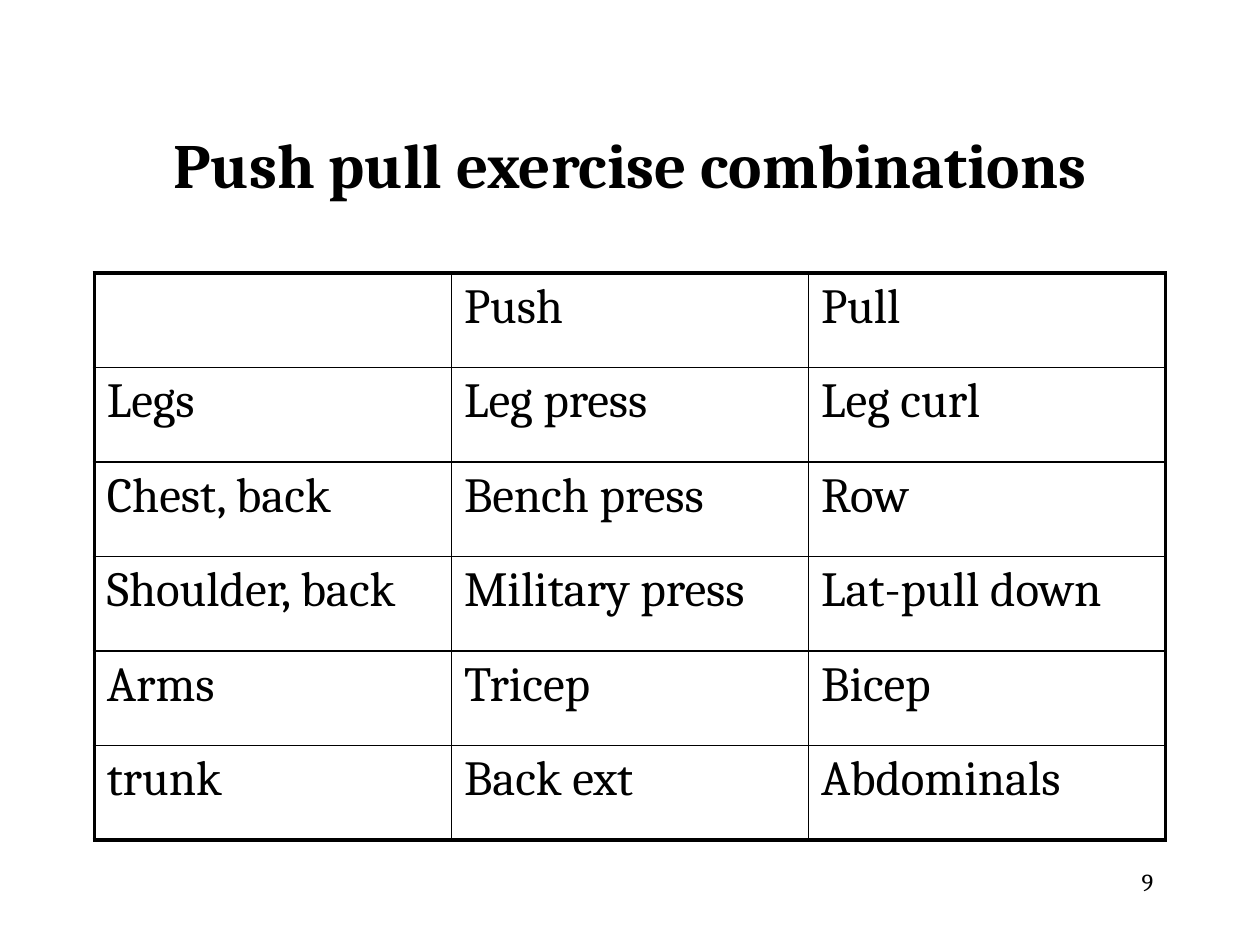
"""Build a slide with a table of push and pull exercises."""
from lxml.etree import SubElement
from pptx import Presentation
from pptx.dml.color import RGBColor
from pptx.enum.text import MSO_ANCHOR, PP_ALIGN
from pptx.oxml.ns import qn
from pptx.util import Cm, Pt

BLACK = RGBColor(0, 0, 0)
FACE = "Cambria"
ROWS = [
    ("", "Push", "Pull"),
    ("Legs", "Leg press", "Leg curl"),
    ("Chest, back", "Bench press", "Row"),
    ("Shoulder, back", "Military press", "Lat-pull down"),
    ("Arms", "Tricep", "Bicep"),
    ("trunk", "Back ext", "Abdominals"),
]


def write(frame, text, size, align=PP_ALIGN.LEFT, bold=False):
    line = frame.paragraphs[0]
    line.text = text
    line.alignment = align
    line.font.name = FACE
    line.font.size = Pt(size)
    line.font.bold = bold
    line.font.color.rgb = BLACK


def edge(cell, side, width):
    props = cell._tc.get_or_add_tcPr()
    line = SubElement(props, qn(f"a:ln{side}"), w=str(Pt(width)))
    fill = SubElement(line, qn("a:solidFill"))
    SubElement(fill, qn("a:srgbClr"), val=str(BLACK))


deck = Presentation()
deck.slide_width, deck.slide_height = Cm(25.4), Cm(19.05)
slide = deck.slides.add_slide(deck.slide_layouts[6])

number = slide.shapes.add_textbox(Cm(18.2), Cm(17.36), Cm(5.3), Cm(1.27)).text_frame
number.word_wrap = True
write(number, "9", 14, PP_ALIGN.RIGHT)

title = slide.shapes.add_textbox(Cm(1.9), Cm(1.7), Cm(21.6), Cm(3.18)).text_frame
title.word_wrap = True
title.vertical_anchor = MSO_ANCHOR.MIDDLE
write(title, "Push pull exercise combinations", 36, PP_ALIGN.CENTER, True)

high, wide = len(ROWS), len(ROWS[0])
table = slide.shapes.add_table(high, wide, Cm(1.9), Cm(5.5), Cm(21.6), Cm(11.43)).table
table.first_row = table.horz_banding = False
for r, row in enumerate(ROWS):
    for c, text in enumerate(row):
        cell = table.cell(r, c)
        outer = {"L": c == 0, "R": c == wide - 1, "T": r == 0, "B": r == high - 1}
        for side, thick in outer.items():
            edge(cell, side, 2.25 if thick else 1)
        cell.fill.background()
        write(cell.text_frame, text, 28)

deck.save("out.pptx")
